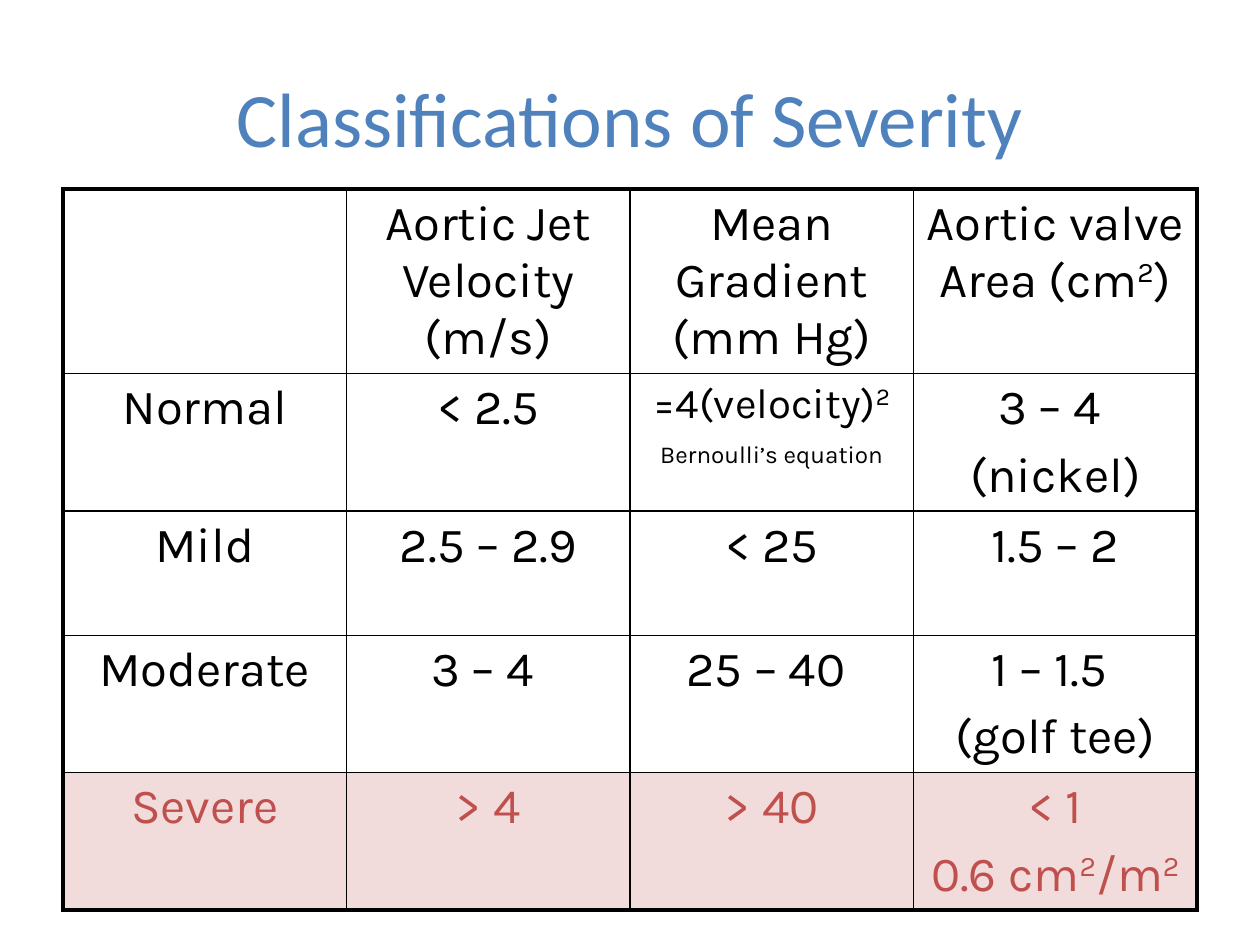
from lxml.etree import SubElement
from pptx import Presentation
from pptx.dml.color import RGBColor
from pptx.enum.text import MSO_ANCHOR, PP_ALIGN
from pptx.oxml.ns import qn
from pptx.util import Pt

INK = {"title": "4F81BD", "text": "000000", "line": "000000",
       "alert": "C0504D", "tint": "F2DCDB"}

# Each cell is a list of paragraphs; text between bars is superscript
ROWS = [
    [[], ["Aortic Jet Velocity (m/s)"], ["Mean Gradient (mm Hg)"],
     ["Aortic valve Area (cm|2|)"]],
    [["Normal"], ["< 2.5"], ["=4(velocity)|2", "|Bernoulli’s equation"],
     ["3 – 4 ", "(nickel)"]],
    [["Mild"], ["2.5 – 2.9"], ["< 25"], ["1.5 – 2"]],
    [["Moderate"], ["3 – 4 "], ["25 – 40 "], ["1 – 1.5 ", "(golf tee)"]],
    [["Severe"], ["> 4"], ["> 40"], ["< 1", "0.6 cm|2|/m|2"]],
]
LAST = len(ROWS) - 1
END = len(ROWS[0]) - 1


def style(run, font, size, ink):
    run.font.name = font
    run.font.size = Pt(size)
    run.font.color.rgb = RGBColor.from_string(INK[ink])


def edge(cell, tag, width, spot):
    props = cell._tc.get_or_add_tcPr()
    line = SubElement(props, qn(tag), w=str(Pt(width)))
    fill = SubElement(line, qn("a:solidFill"))
    SubElement(fill, qn("a:srgbClr"), val=INK["line"])
    props.insert(spot, line)


deck = Presentation()
deck.slide_width, deck.slide_height = Pt(720), Pt(540)
slide = deck.slides.add_slide(deck.slide_layouts[5])

# Title
title = slide.shapes.title
title.left, title.top, title.width, title.height = Pt(36), Pt(21.6), Pt(648), Pt(90)
frame = title.text_frame
frame.text = "Classifications of Severity"
frame.vertical_anchor = MSO_ANCHOR.MIDDLE
frame.paragraphs[0].alignment = PP_ALIGN.CENTER
style(frame.paragraphs[0].runs[0], "Calibri", 44, "title")

# Severity table
table = slide.shapes.add_table(len(ROWS), len(ROWS[0]), Pt(36), Pt(108),
                               Pt(648), Pt(356.4)).table
table.first_row = table.horz_banding = False
for row in table.rows:
    row.height = Pt(71.28)

for r, row in enumerate(ROWS):
    for c, paras in enumerate(row):
        cell = table.cell(r, c)

        # Fill, with the severe row tinted
        if r == LAST:
            cell.fill.solid()
            cell.fill.fore_color.rgb = RGBColor.from_string(INK["tint"])
        else:
            cell.fill.background()

        # Thick frame outside, thin lines inside
        outer = {"a:lnL": c == 0, "a:lnR": c == END,
                 "a:lnT": r == 0, "a:lnB": r == LAST}
        for spot, (tag, thick) in enumerate(outer.items()):
            edge(cell, tag, 2.25 if thick else 1, spot)

        # Text
        size = 24 if (r, c) == (1, 2) else 28
        for n, text in enumerate(paras):
            frame = cell.text_frame
            para = frame.add_paragraph() if n else frame.paragraphs[0]
            para.alignment = PP_ALIGN.CENTER
            if n:
                para.space_before = Pt(size * 0.2)
            for k, piece in enumerate(text.split("|")):
                if not piece:
                    continue
                run = para.add_run()
                run.text = piece
                style(run, "Karla", size, "alert" if r == LAST else "text")
                if k % 2:
                    run.font._element.set("baseline", "30000")

deck.save("out.pptx")
